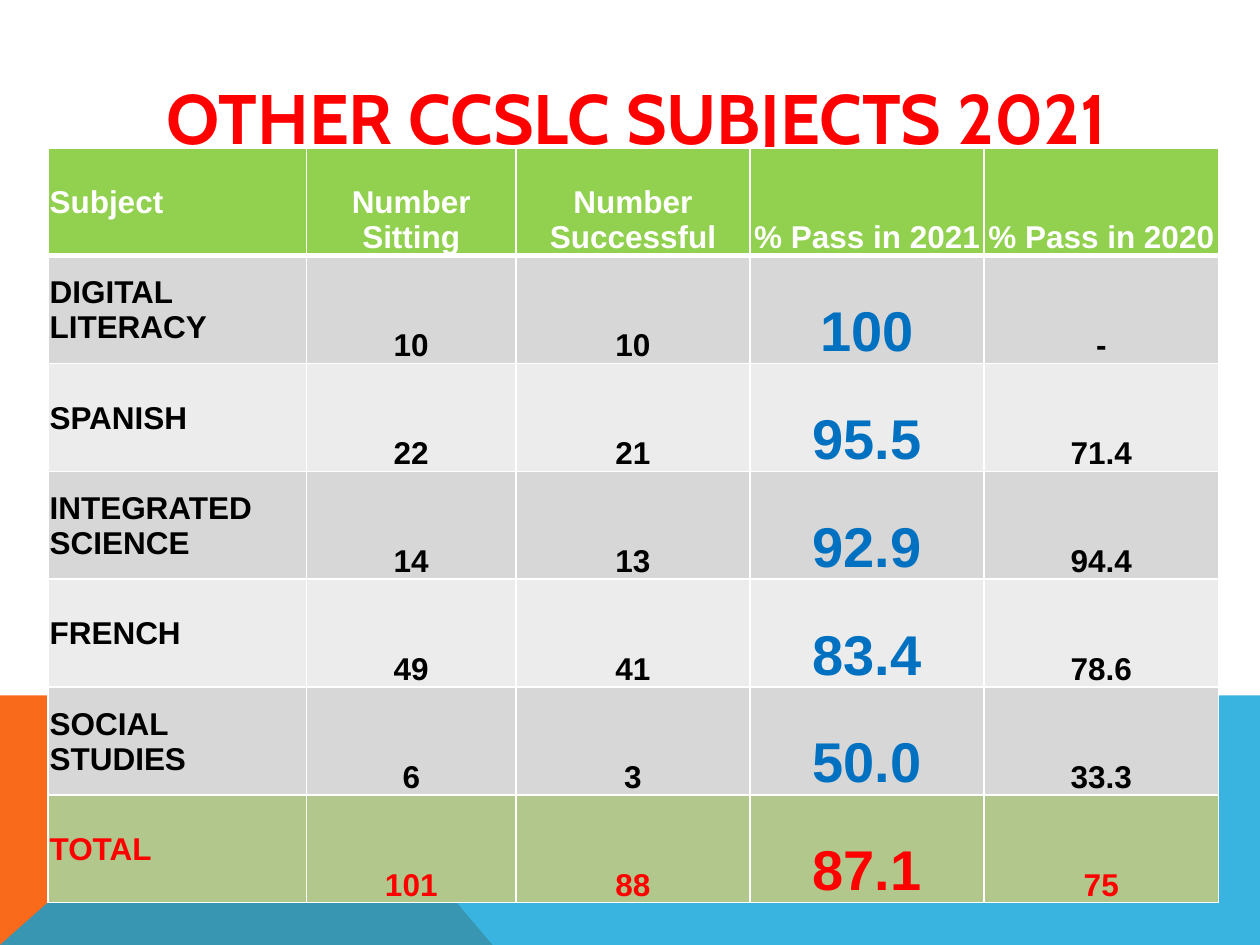
import pptx
import pptx.dml.color
import pptx.enum.text
import pptx.oxml
import pptx.oxml.ns
import pptx.util

Cm = pptx.util.Cm
Pt = pptx.util.Pt
ALIGN = pptx.enum.text.PP_ALIGN
ANCHOR = pptx.enum.text.MSO_ANCHOR

WHITE, BLACK, RED, BLUE = "FFFFFF", "000000", "FF0000", "0070C0"
HEAD, TOTAL, BANDS = "92D050", "B2C78C", ("D7D7D8", "ECECEC")
PASS = 3
WIDTHS = (5.21, 4.22, 4.72, 4.72, 4.72)
ROWS = (
    ("Subject", "Number Sitting", "Number Successful",
     "% Pass in 2021", "% Pass in 2020"),
    ("DIGITAL LITERACY", "10", "10", "100", "-"),
    ("SPANISH", "22", "21", "95.5", "71.4"),
    ("INTEGRATED SCIENCE", "14", "13", "92.9", "94.4"),
    ("FRENCH", "49", "41", "83.4", "78.6"),
    ("SOCIAL STUDIES", "6", "3", "50.0", "33.3"),
    ("TOTAL", "101", "88", "87.1", "75"),
)


def paint(fill, color):
    """Give a fill one solid colour from a hex string."""
    fill.solid()
    fill.fore_color.rgb = pptx.dml.color.RGBColor.from_string(color)


def style(para, name, size, color, align):
    """Set the bold font and the alignment of a paragraph."""
    para.alignment = align
    font = para.font
    font.name, font.size, font.bold = name, Pt(size), True
    paint(font.fill, color)


def draw_shape(slide, points, color, alpha=100):
    """Draw a closed outline through points in centimetres."""
    spots = [(Cm(x), Cm(y)) for x, y in points]
    pen = slide.shapes.build_freeform(*spots[0])
    pen.add_line_segments(spots[1:], close=True)
    shape = pen.convert_to_shape()
    shape.shadow.inherit = False
    shape.line.fill.background()
    paint(shape.fill, color)
    if alpha < 100:
        tint = shape.element.find(".//" + pptx.oxml.ns.qn("a:srgbClr"))
        tint.append(pptx.oxml.parse_xml(
            f'<a:alpha {pptx.oxml.ns.nsdecls("a")} val="{alpha * 1000}"/>'))


def add_base(slide, left, top, width, height):
    """Draw the two slanted colour bands at the foot."""
    low = top + height
    peak = (left + 5.67, top)
    draw_shape(slide, [(left, low), (left, top), peak,
                       (left + 9.93, low)], "F96A1B")
    draw_shape(slide, [(left, low), peak, (left + width, top),
                       (left + width, low)], "08A1D9", 80)


def add_title(slide, left, top, width, height):
    """Place the title above the bands."""
    title = slide.shapes.title
    title.left, title.top = Cm(left), Cm(top)
    title.width, title.height = Cm(width), Cm(height)
    title.text = "OTHER CCSLC SUBJECTS 2021"
    title.text_frame.vertical_anchor = ANCHOR.MIDDLE
    style(title.text_frame.paragraphs[0], "Cabin", 40, RED, ALIGN.CENTER)
    title.element.getparent().append(title.element)


def add_edge(cell, side, width):
    """Add a white border on one side of a cell."""
    cell._tc.get_or_add_tcPr().append(pptx.oxml.parse_xml(
        f'<a:ln{side} {pptx.oxml.ns.nsdecls("a")} w="{Pt(width)}">'
        f'<a:solidFill><a:srgbClr val="{WHITE}"/></a:solidFill></a:ln{side}>'))


def row_look(row):
    """Return the fill and the text colour of a row."""
    if row == 0:
        return HEAD, WHITE
    if row == len(ROWS) - 1:
        return TOTAL, RED
    return BANDS[(row - 1) % 2], BLACK


def fill_cell(cell, row, col):
    """Write one cell and set its look."""
    back, color = row_look(row)
    big = col == PASS and row > 0
    if big and color == BLACK:
        color = BLUE
    cell.text = ROWS[row][col]
    cell.margin_left = cell.margin_right = cell.margin_top = Cm(0.03)
    cell.margin_bottom = 0
    cell.vertical_anchor = ANCHOR.BOTTOM if col else ANCHOR.MIDDLE
    style(cell.text_frame.paragraphs[0], "Arial", 32 if big else 18, color,
          ALIGN.CENTER if col else ALIGN.LEFT)
    for side in "LRTB":
        thick = (row, side) in ((0, "B"), (1, "T"))
        add_edge(cell, side, 3 if thick else 1)
    paint(cell.fill, back)


def add_marks(slide, left, top, width, height):
    """Place the table of results."""
    table = slide.shapes.add_table(
        len(ROWS), len(WIDTHS), Cm(left), Cm(top), Cm(width), Cm(height)).table
    for col, size in enumerate(WIDTHS):
        table.columns[col].width = Cm(size * width / sum(WIDTHS))
    for row in range(len(ROWS)):
        for col in range(len(WIDTHS)):
            fill_cell(table.cell(row, col), row, col)


def main():
    """Build the slide and save it."""
    deck = pptx.Presentation()
    deck.slide_width, deck.slide_height = Cm(25.4), Cm(19.05)
    slide = deck.slides.add_slide(deck.slide_layouts[5])
    add_base(slide, 0, 14.02, 25.4, 5.03)
    add_title(slide, 1.4, 1.07, 22.86, 2.54)
    add_marks(slide, 0.97, 2.98, 23.59, 15.22)
    deck.save("out.pptx")


if __name__ == "__main__":
    main()
